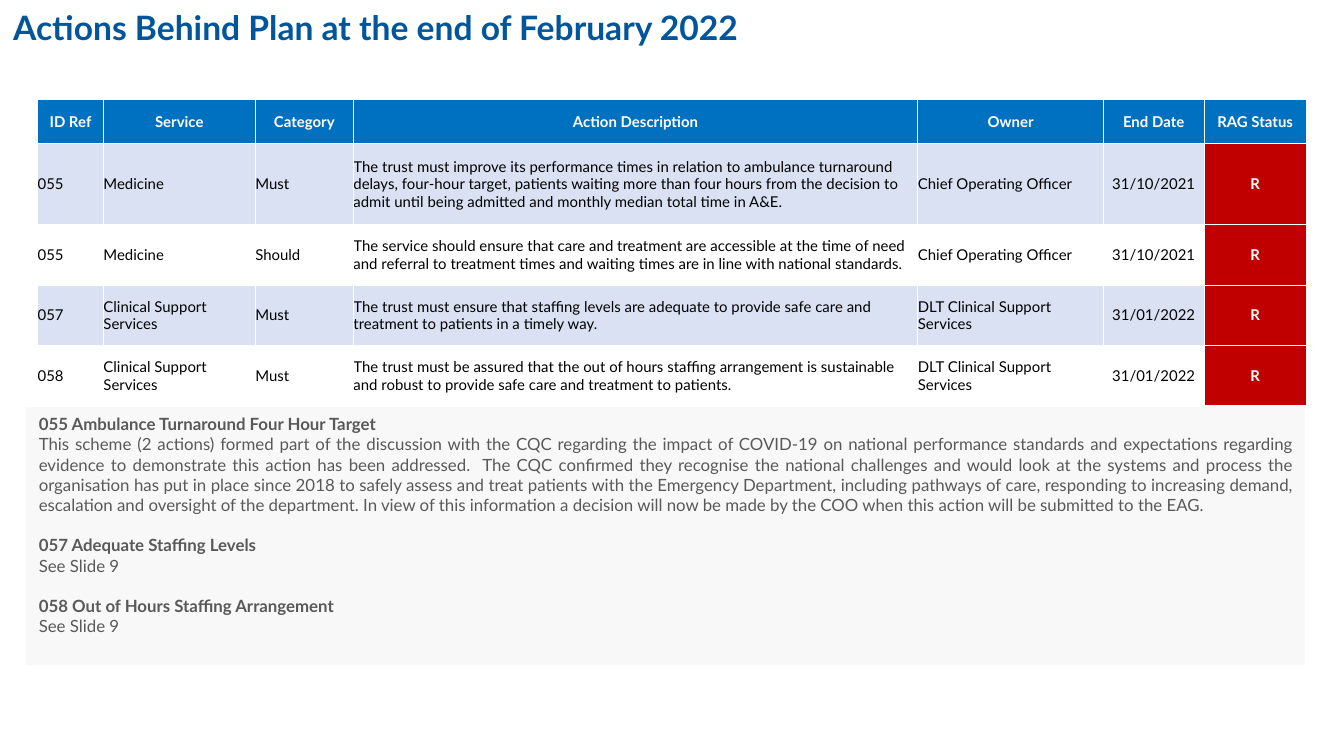
from lxml.etree import SubElement
from pptx import Presentation
from pptx.dml.color import RGBColor
from pptx.enum.shapes import MSO_SHAPE
from pptx.enum.text import MSO_ANCHOR, PP_ALIGN
from pptx.oxml.ns import qn
from pptx.util import Inches, Pt

FONT = "Lato"
TITLE_BLUE = RGBColor(0x00, 0x55, 0x9B)
HEADER_BLUE = RGBColor(0x00, 0x70, 0xC0)
BAND_BLUE = RGBColor(0xD9, 0xE1, 0xF2)
RED = RGBColor(0xC0, 0x00, 0x00)
PANEL_GREY = RGBColor(0xF2, 0xF2, 0xF2)
TEXT_GREY = RGBColor(0x59, 0x59, 0x59)
BLACK = RGBColor(0x00, 0x00, 0x00)
WHITE = RGBColor(0xFF, 0xFF, 0xFF)

HEADINGS = ["ID Ref", "Service", "Category", "Action Description", "Owner", "End Date", "RAG Status"]
ACTIONS = [
    ["055", "Medicine", "Must",
     "The trust must improve its performance times in relation to ambulance turnaround delays, "
     "four-hour target, patients waiting more than four hours from the decision to admit until "
     "being admitted and monthly median total time in A&E.",
     "Chief Operating Officer", "31/10/2021", "R"],
    ["055", "Medicine", "Should",
     "The service should ensure that care and treatment are accessible at the time of need and "
     "referral to treatment times and waiting times are in line with national standards.",
     "Chief Operating Officer", "31/10/2021", "R"],
    ["057", "Clinical Support Services", "Must",
     "The trust must ensure that staffing levels are adequate to provide safe care and treatment "
     "to patients in a timely way.",
     "DLT Clinical Support Services", "31/01/2022", "R"],
    ["058", "Clinical Support Services", "Must",
     "The trust must be assured that the out of hours staffing arrangement is sustainable and "
     "robust to provide safe care and treatment to patients.",
     "DLT Clinical Support Services", "31/01/2022", "R"],
]
COLUMN_WIDTHS = [0.49, 1.13, 0.73, 4.2, 1.38, 0.75, 0.76]
ROW_HEIGHTS = [0.33, 0.6, 0.45, 0.45, 0.45]
DATE_COLUMN, STATUS_COLUMN = 5, 6

UPDATES = [
    ("055 Ambulance Turnaround Four Hour Target",
     "This scheme (2 actions) formed part of the discussion with the CQC regarding the impact of "
     "COVID-19 on national performance standards and expectations regarding evidence to "
     "demonstrate this action has been addressed.  The CQC confirmed they recognise the national "
     "challenges and would look at the systems and process the organisation has put in place "
     "since 2018 to safely assess and treat patients with the Emergency Department, including "
     "pathways of care, responding to increasing demand, escalation and oversight of the "
     "department. In view of this information a decision will now be made by the COO when this "
     "action will be submitted to the EAG."),
    ("057 Adequate Staffing Levels", "See Slide 9"),
    ("058 Out of Hours Staffing Arrangement", "See Slide 9"),
]


def write(paragraph, text, size=8, color=BLACK, bold=False, align=PP_ALIGN.LEFT, before=0):
    paragraph.alignment = align
    if before:
        paragraph.space_before = Pt(before)
    run = paragraph.add_run()
    run.text = text
    run.font.name = FONT
    run.font.size = Pt(size)
    run.font.bold = bold
    run.font.color.rgb = color


def add_borders(cell, color=WHITE, width=0.5):
    properties = cell._tc.get_or_add_tcPr()
    for side in ("a:lnL", "a:lnR", "a:lnT", "a:lnB"):
        line = SubElement(properties, qn(side), w=str(Pt(width)))
        fill = SubElement(line, qn("a:solidFill"))
        SubElement(fill, qn("a:srgbClr"), val=str(color))


class ReportSlide:
    def __init__(self, slide):
        self.shapes = slide.shapes

    def title(self, text):
        box = self.shapes.add_textbox(0, 0, Inches(10), Inches(0.46))
        box.text_frame.word_wrap = True
        write(box.text_frame.paragraphs[0], text, size=18, color=TITLE_BLUE, bold=True)

    def cell(self, cell, text, fill=None, **text_format):
        cell.margin_left = cell.margin_right = cell.margin_top = cell.margin_bottom = 0
        cell.vertical_anchor = MSO_ANCHOR.MIDDLE
        add_borders(cell)
        if fill is None:
            cell.fill.background()
        else:
            cell.fill.solid()
            cell.fill.fore_color.rgb = fill
        write(cell.text_frame.paragraphs[0], text, **text_format)

    def action_table(self, left, top):
        table = self.shapes.add_table(
            len(ROW_HEIGHTS), len(COLUMN_WIDTHS), Inches(left), Inches(top),
            Inches(sum(COLUMN_WIDTHS)), Inches(sum(ROW_HEIGHTS))).table
        table.first_row = table.horz_banding = False
        for column, width in zip(table.columns, COLUMN_WIDTHS):
            column.width = Inches(width)
        for row, height in zip(table.rows, ROW_HEIGHTS):
            row.height = Inches(height)

        emphasis = dict(color=WHITE, bold=True, align=PP_ALIGN.CENTER)
        for c, heading in enumerate(HEADINGS):
            self.cell(table.cell(0, c), heading, fill=HEADER_BLUE, **emphasis)
        for r, action in enumerate(ACTIONS, start=1):
            band = BAND_BLUE if r % 2 else None
            for c, text in enumerate(action):
                if c == STATUS_COLUMN:
                    self.cell(table.cell(r, c), text, fill=RED, **emphasis)
                else:
                    align = PP_ALIGN.CENTER if c == DATE_COLUMN else PP_ALIGN.LEFT
                    self.cell(table.cell(r, c), text, fill=band, align=align)

    def update_panel(self, left, top, width, height):
        panel = self.shapes.add_shape(
            MSO_SHAPE.RECTANGLE, Inches(left), Inches(top), Inches(width), Inches(height))
        panel.shadow.inherit = False
        panel.line.fill.background()
        panel.fill.solid()
        panel.fill.fore_color.rgb = PANEL_GREY
        grey = panel._element.spPr.find(qn("a:solidFill")).find(qn("a:srgbClr"))
        SubElement(grey, qn("a:alpha"), val="51000")

        frame = panel.text_frame
        frame.word_wrap = True
        frame.vertical_anchor = MSO_ANCHOR.TOP
        style = dict(size=9, color=TEXT_GREY, align=PP_ALIGN.JUSTIFY)
        for i, (heading, update) in enumerate(UPDATES):
            paragraph = frame.add_paragraph() if i else frame.paragraphs[0]
            write(paragraph, heading, bold=True, before=10.8 if i else 0, **style)
            write(frame.add_paragraph(), update, **style)


def main():
    deck = Presentation()
    deck.slide_width = Inches(10)
    deck.slide_height = deck.slide_width * 9 // 16
    report = ReportSlide(deck.slides.add_slide(deck.slide_layouts[6]))
    report.title("Actions Behind Plan at the end of February 2022")
    report.action_table(0.28, 0.74)
    report.update_panel(0.19, 3.03, 9.52, 1.92)
    deck.save("out.pptx")


if __name__ == "__main__":
    main()
